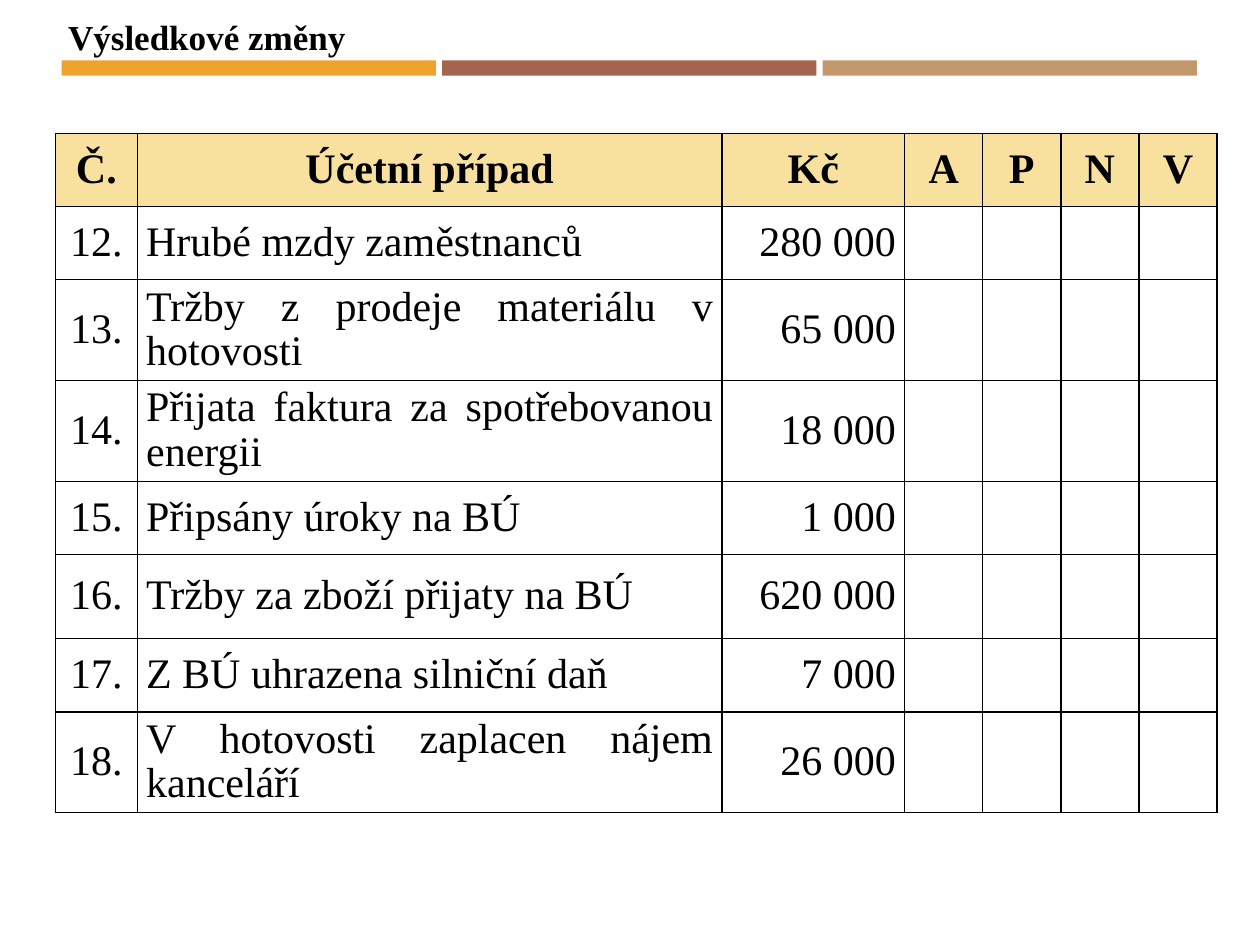
from typing import NamedTuple

from lxml import etree
from pptx import Presentation
from pptx.dml.color import RGBColor
from pptx.enum import shapes, text
from pptx.oxml.ns import qn
from pptx.util import Inches, Pt

FONT = "Times New Roman"
COLORS = {
    "text": "000000",
    "border": "000000",
    "header": "F8E19F",
    "orange": "F0A22E",
    "brown": "A5644E",
    "tan": "C3986D",
}
ALIGN = text.PP_ALIGN


class Entry(NamedTuple):
    number: str
    description: str
    amount: str
    height: float = 0.58


HEADERS = ["Č.", "Účetní případ", "Kč", "A", "P", "N", "V"]
HEADER_HEIGHT = 0.58
COLUMN_WIDTHS = [0.65, 4.64, 1.45] + [0.62] * 4
ENTRY_ALIGN = [ALIGN.CENTER, ALIGN.JUSTIFY, ALIGN.RIGHT]
TWO_LINES = 0.8
ENTRIES = [
    Entry("12.", "Hrubé mzdy zaměstnanců", "280 000"),
    Entry("13.", "Tržby z prodeje materiálu v hotovosti", "65 000", TWO_LINES),
    Entry("14.", "Přijata faktura za spotřebovanou energii", "18 000", TWO_LINES),
    Entry("15.", "Připsány úroky na BÚ", "1 000"),
    Entry("16.", "Tržby za zboží přijaty na BÚ", "620 000", 0.67),
    Entry("17.", "Z BÚ uhrazena silniční daň", "7 000"),
    Entry("18.", "V hotovosti zaplacen nájem kanceláří", "26 000", TWO_LINES),
]


def rgb(name: str) -> RGBColor:
    return RGBColor.from_string(COLORS[name])


def add_run(p, content: str, size: float, bold: bool) -> None:
    r = p.add_run()
    r.text = content
    r.font.name = FONT
    r.font.size = Pt(size)
    r.font.bold = bold
    r.font.color.rgb = rgb("text")


def add_bars(slide) -> None:
    width, pitch = 2.97, 3.02
    for i, color in enumerate(["orange", "brown", "tan"]):
        sp = slide.shapes.add_shape(
            shapes.MSO_SHAPE.RECTANGLE,
            Inches(0.49 + i * pitch), Inches(0.48), Inches(width), Inches(0.12))
        sp.shadow.inherit = False
        sp.fill.solid()
        sp.fill.fore_color.rgb = rgb(color)
        sp.line.fill.background()


def set_title(slide, content: str) -> None:
    title = slide.shapes.title
    title.left, title.top = Inches(0.44), Inches(0.07)
    title.width, title.height = Inches(2.42), Inches(0.44)
    tf = title.text_frame
    tf.word_wrap = False
    tf.auto_size = text.MSO_AUTO_SIZE.NONE
    tf.vertical_anchor = text.MSO_ANCHOR.MIDDLE
    p = tf.paragraphs[0]
    p.alignment = ALIGN.LEFT
    add_run(p, content, 20, True)


def add_borders(cell) -> None:
    tc_pr = cell._tc.get_or_add_tcPr()
    for side in ("lnL", "lnR", "lnT", "lnB"):
        ln = etree.SubElement(tc_pr, qn(f"a:{side}"), w=str(Pt(1)))
        fill = etree.SubElement(ln, qn("a:solidFill"))
        etree.SubElement(fill, qn("a:srgbClr"), val=COLORS["border"])


def fill_cell(cell, content: str, align: ALIGN, header: bool) -> None:
    add_borders(cell)
    if header:
        cell.fill.solid()
        cell.fill.fore_color.rgb = rgb("header")
    else:
        cell.fill.background()
    cell.vertical_anchor = text.MSO_ANCHOR.MIDDLE
    cell.margin_left = cell.margin_right = Inches(0.07)
    cell.margin_top = cell.margin_bottom = 0
    if content:
        p = cell.text_frame.paragraphs[0]
        p.alignment = align
        p.line_spacing = 0.96
        add_run(p, content, 24, header)


def add_entries_table(slide) -> None:
    heights = [HEADER_HEIGHT] + [entry.height for entry in ENTRIES]
    table = slide.shapes.add_table(
        len(heights), len(HEADERS), Inches(0.44), Inches(1.06),
        Inches(sum(COLUMN_WIDTHS)), Inches(sum(heights))).table
    table.horz_banding = False
    for column, width in zip(table.columns, COLUMN_WIDTHS):
        column.width = Inches(width)
    for row, height in zip(table.rows, heights):
        row.height = Inches(height)

    for col, label in enumerate(HEADERS):
        fill_cell(table.cell(0, col), label, ALIGN.CENTER, True)
    blanks = len(HEADERS) - len(ENTRY_ALIGN)
    aligns = ENTRY_ALIGN + [ALIGN.CENTER] * blanks
    for row, entry in enumerate(ENTRIES, start=1):
        values = [entry.number, entry.description, entry.amount] + [""] * blanks
        for col, (value, align) in enumerate(zip(values, aligns)):
            fill_cell(table.cell(row, col), value, align, False)


def main() -> None:
    prs = Presentation()
    prs.slide_width, prs.slide_height = Inches(10), Inches(7.5)
    slide = prs.slides.add_slide(prs.slide_layouts.get_by_name("Title Only"))
    add_bars(slide)
    set_title(slide, "Výsledkové změny")
    add_entries_table(slide)
    prs.save("out.pptx")


if __name__ == "__main__":
    main()
